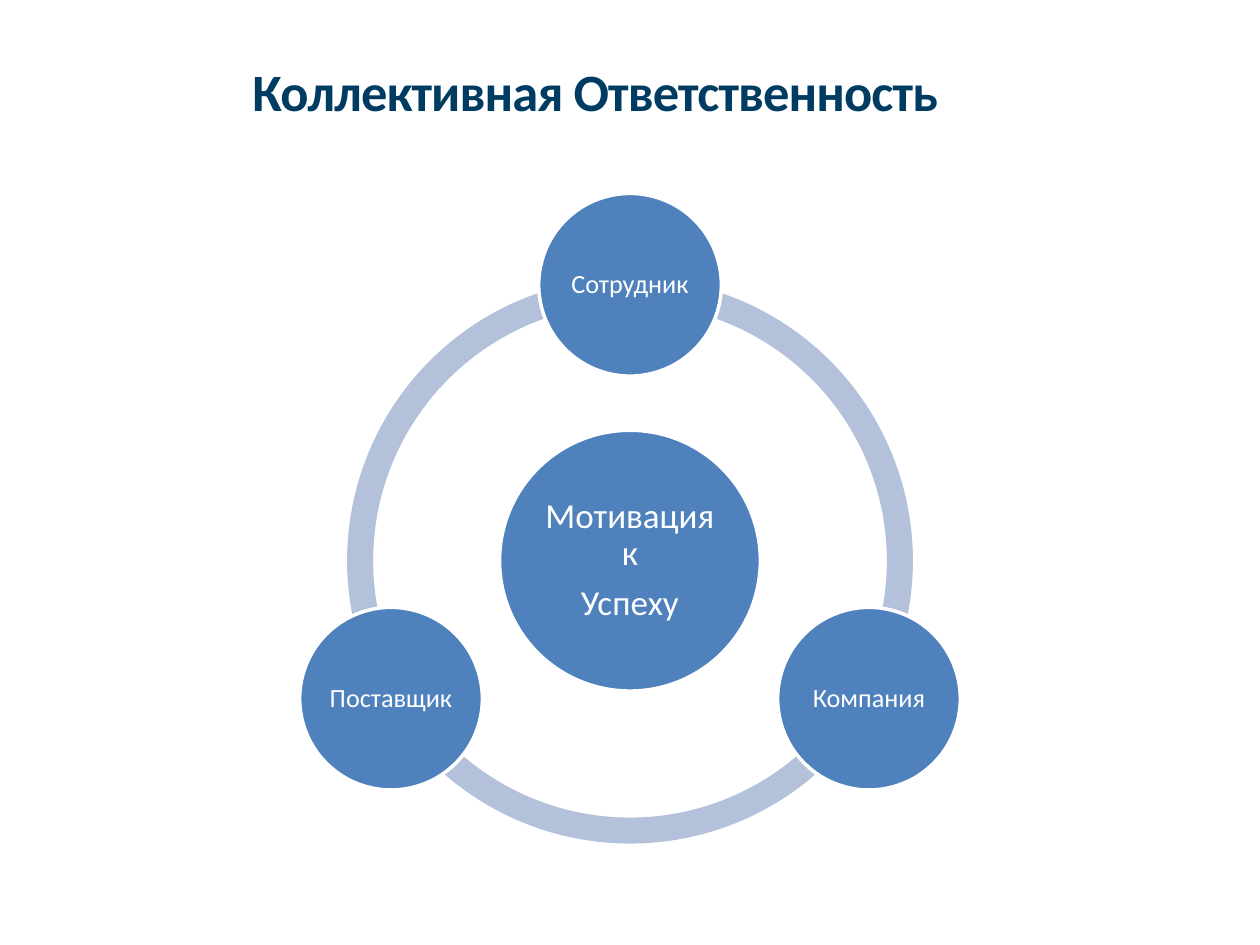
import math
from dataclasses import dataclass

from pptx import Presentation
from pptx.dml.color import RGBColor
from pptx.enum.shapes import MSO_SHAPE
from pptx.enum.text import MSO_ANCHOR, PP_ALIGN
from pptx.util import Inches, Pt

OVAL, BLOCK_ARC = MSO_SHAPE.OVAL, MSO_SHAPE.BLOCK_ARC
CENTER = PP_ALIGN.CENTER
MIDDLE, BOTTOM = MSO_ANCHOR.MIDDLE, MSO_ANCHOR.BOTTOM


@dataclass(frozen=True)
class Theme:
    font: str = "Calibri"
    title_color: RGBColor = RGBColor(0x00, 0x3C, 0x61)
    circle: RGBColor = RGBColor(0x4F, 0x81, 0xBD)
    ring: RGBColor = RGBColor(0xB3, 0xC1, 0xDB)
    white: RGBColor = RGBColor(0xFF, 0xFF, 0xFF)
    title_size: int = 30
    hub_size: int = 20
    node_size: int = 15


theme = Theme()


def set_text(shape, lines, size, color, anchor, inset):
    """Fill a shape with centred paragraphs."""
    text_frame = shape.text_frame
    text_frame.text = "\n".join(lines)
    text_frame.word_wrap = True
    text_frame.vertical_anchor = anchor
    text_frame.margin_left = text_frame.margin_right = Inches(inset)
    text_frame.margin_top = text_frame.margin_bottom = Inches(inset)
    for paragraph in text_frame.paragraphs:
        paragraph.alignment = CENTER
        font = paragraph.runs[0].font
        font.name, font.size, font.color.rgb = theme.font, Pt(size), color


def add_circle(center_x, center_y, diameter, lines, size, inset):
    """Add a labelled circle around a centre point."""
    shape = slide.shapes.add_shape(
        OVAL, Inches(center_x - diameter / 2), Inches(center_y - diameter / 2),
        Inches(diameter), Inches(diameter))
    shape.shadow.inherit = False
    shape.fill.solid()
    shape.fill.fore_color.rgb = theme.circle
    shape.line.color.rgb = theme.white
    shape.line.width = Pt(2)
    set_text(shape, lines, size, theme.white, MIDDLE, inset)
    for paragraph in shape.text_frame.paragraphs:
        paragraph.line_spacing = 0.9
        paragraph.space_after = Pt(0.35 * size)


presentation = Presentation()
presentation.slide_width, presentation.slide_height = Inches(10), Inches(7.5)
slide = presentation.slides.add_slide(presentation.slide_layouts[6])

# Diagram geometry, in inches and degrees clockwise from the right
HUB_X, HUB_Y = 5, 4.45
RING_DIAMETER, ORBIT_RADIUS = 4.49, 2.19
HUB_DIAMETER, NODE_DIAMETER = 2.07, 1.45
nodes = {"Сотрудник": 270, "Компания": 30, "Поставщик": 150}

# Ring: one arc from each node to the next
for start in nodes.values():
    arc = slide.shapes.add_shape(
        BLOCK_ARC, Inches(HUB_X - RING_DIAMETER / 2),
        Inches(HUB_Y - RING_DIAMETER / 2),
        Inches(RING_DIAMETER), Inches(RING_DIAMETER))
    arc.shadow.inherit = False
    arc.fill.solid()
    arc.fill.fore_color.rgb = theme.ring
    arc.line.fill.background()
    # Angle adjustments are stored as 0.6 per degree
    arc.adjustments[0] = start * 0.6
    arc.adjustments[1] = (start + 120) % 360 * 0.6
    arc.adjustments[2] = 0.046

# Hub
add_circle(HUB_X, HUB_Y, HUB_DIAMETER, ["Мотивация к", "Успеху"],
           theme.hub_size, 0.03)

# Nodes on the ring
for label, degrees in nodes.items():
    angle = math.radians(degrees)
    add_circle(HUB_X + ORBIT_RADIUS * math.cos(angle),
               HUB_Y + ORBIT_RADIUS * math.sin(angle),
               NODE_DIAMETER, [label], theme.node_size, 0.02)

# Title
title = slide.shapes.add_textbox(Inches(1.22), Inches(0.18), Inches(7.01), Inches(0.79))
set_text(title, ["Коллективная Ответственность"], theme.title_size,
         theme.title_color, BOTTOM, 0)
title_font = title.text_frame.paragraphs[0].runs[0].font
title_font.bold = True
title_font._element.set("spc", "-50")

presentation.save("out.pptx")
